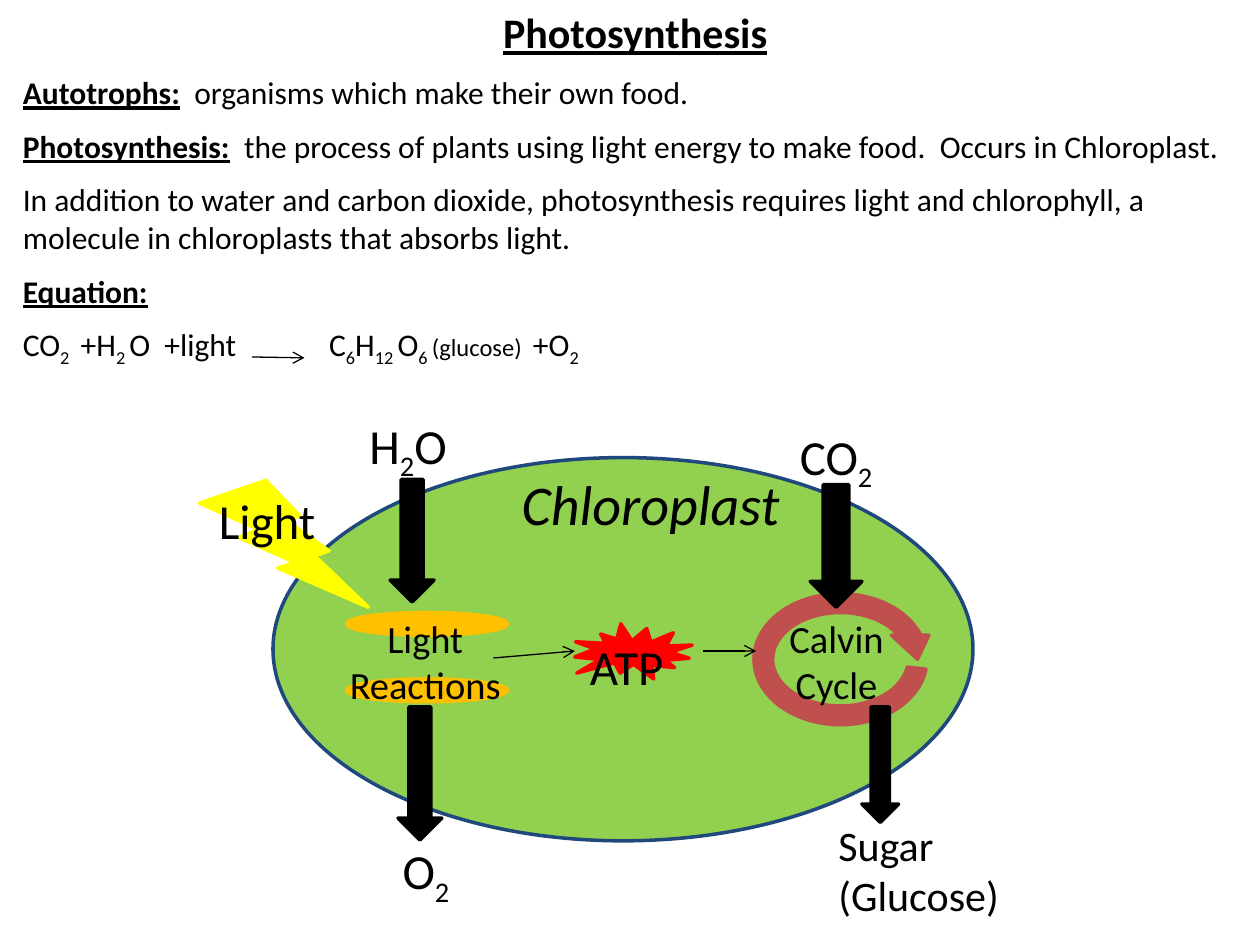
from lxml import etree
from pptx import Presentation
from pptx.dml.color import RGBColor
from pptx.enum.shapes import MSO_CONNECTOR, MSO_SHAPE
from pptx.enum.text import MSO_ANCHOR, MSO_AUTO_SIZE, PP_ALIGN
from pptx.oxml.ns import qn
from pptx.util import Pt

STRAIGHT = MSO_CONNECTOR.STRAIGHT
OVAL = MSO_SHAPE.OVAL
DOWN_ARROW = MSO_SHAPE.DOWN_ARROW
CYCLE_ARROW = MSO_SHAPE.CIRCULAR_ARROW
BOLT = MSO_SHAPE.LIGHTNING_BOLT
BURST = MSO_SHAPE.EXPLOSION1
LEFT, CENTER = PP_ALIGN.LEFT, PP_ALIGN.CENTER
TOP = MSO_ANCHOR.TOP
NO_FIT = MSO_AUTO_SIZE.NONE

BLACK = RGBColor(0x00, 0x00, 0x00)
GREEN = RGBColor(0x92, 0xD0, 0x50)
NAVY = RGBColor(0x1F, 0x49, 0x7D)
ORANGE = RGBColor(0xFF, 0xC0, 0x00)
BRICK = RGBColor(0xC0, 0x50, 0x4D)
YELLOW = RGBColor(0xFF, 0xFF, 0x00)
RED = RGBColor(0xFF, 0x00, 0x00)

FONT = "Calibri"
PLAIN, SUB, TERM, SMALL = "plain", "subscript", "term", "small"
PRODUCTS_TAB = 175

NOTES = [
    [("Autotrophs:", TERM), ("  organisms which make their own food.", PLAIN)],
    [("Photosynthesis:", TERM),
     ("  the process of plants using light energy to make food."
      "  Occurs in Chloroplast.", PLAIN)],
    [("In addition to water and carbon dioxide, photosynthesis requires light "
      "and chlorophyll, a molecule in chloroplasts that absorbs light.", PLAIN)],
    [("Equation:", TERM)],
    [("CO", PLAIN), ("2 ", SUB), (" +H", PLAIN), ("2 ", SUB),
     ("O  +light\tC", PLAIN), ("6", SUB), ("H", PLAIN), ("12 ", SUB),
     ("O", PLAIN), ("6 ", SUB), ("(glucose)  ", SMALL), ("+O", PLAIN),
     ("2", SUB)],
]

# Spans, left, top, width, height, size, alignment
LABELS = [
    ([("ATP", PLAIN)], 330, 360, 79, 41, 28, LEFT),
    ([("Calvin Cycle", PLAIN)], 426, 348, 104, 61, 22, CENTER),
    ([("Light", PLAIN)], 118, 277, 74, 41, 28, LEFT),
    ([("H", PLAIN), ("2", SUB), ("O", PLAIN)], 204, 234, 67, 41, 28, LEFT),
    ([("O", PLAIN), ("2", SUB)], 223, 477, 58, 41, 28, LEFT),
    ([("CO", PLAIN), ("2", SUB)], 450, 240, 71, 41, 28, LEFT),
    ([("Sugar (Glucose)", PLAIN)], 472, 464.5, 129, 66, 24, LEFT),
    ([("Light Reactions", PLAIN)], 174, 348, 138, 61, 22, CENTER),
]

# Left, top, width, height of the arrows for what goes in and out
FLOWS = [
    (223, 274, 25, 70),
    (227.5, 404, 25, 76),
    (463, 277, 29.5, 70),
    (492.5, 404, 21, 66),
]


def format_paragraph(para, size, align=LEFT):
    para.alignment = align
    para.font.name = FONT
    para.font.size = Pt(size)
    para.font.color.rgb = BLACK


def add_spans(para, spans):
    for text, style in spans:
        span = para.add_run()
        span.text = text
        if style == TERM:
            span.font.bold = span.font.underline = True
        elif style == SMALL:
            span.font.size = Pt(14)
        elif style == SUB:
            span._r.get_or_add_rPr().set("baseline", "-25000")


def add_tab_stop(para, position):
    properties = para._p.get_or_add_pPr()
    stops = etree.Element(qn("a:tabLst"))
    etree.SubElement(stops, qn("a:tab"), pos=str(Pt(position)), algn="l")
    # The schema wants tab stops ahead of the default run properties
    properties.find(qn("a:defRPr")).addprevious(stops)


def add_box(page, left, top, width, height):
    box = page.shapes.add_textbox(Pt(left), Pt(top), Pt(width), Pt(height))
    box.text_frame.word_wrap = True
    return box.text_frame


def add_label(page, spans, left, top, width, height, size, align):
    para = add_box(page, left, top, width, height).paragraphs[0]
    format_paragraph(para, size, align)
    add_spans(para, spans)
    return para


def add_figure(page, kind, left, top, width, height, fill, line=None):
    shape = page.shapes.add_shape(kind, Pt(left), Pt(top), Pt(width), Pt(height))
    shape.shadow.inherit = False
    shape.fill.solid()
    shape.fill.fore_color.rgb = fill
    shape.line.color.rgb = line or fill
    shape.line.width = Pt(2)
    return shape


def add_arrow(page, x1, y1, x2, y2):
    arrow = page.shapes.add_connector(STRAIGHT, Pt(x1), Pt(y1), Pt(x2), Pt(y2))
    arrow.line.color.rgb = BLACK
    arrow.line.width = Pt(0.75)
    etree.SubElement(arrow.line._get_or_add_ln(), qn("a:tailEnd"), type="arrow")
    etree.SubElement(arrow._element.spPr, qn("a:effectLst"))


def add_title(page):
    title = page.shapes.title
    title.left, title.top, title.width, title.height = Pt(6), Pt(0), Pt(714), Pt(37)
    frame = title.text_frame
    frame.text = "Photosynthesis"
    frame.vertical_anchor = TOP
    frame.auto_size = NO_FIT
    para = frame.paragraphs[0]
    format_paragraph(para, 24, CENTER)
    para.font.bold = para.font.underline = True


def add_notes(page):
    frame = add_box(page, 6, 38.3, 714, 190)
    for index, spans in enumerate(NOTES):
        para = frame.add_paragraph() if index else frame.paragraphs[0]
        format_paragraph(para, 18)
        para.space_after = Pt(9)
        add_spans(para, spans)
    add_tab_stop(para, PRODUCTS_TAB)
    add_arrow(page, 144, 204, 174, 204.5)


def add_chloroplast(page):
    add_figure(page, OVAL, 156, 261.5, 400, 219, GREEN, NAVY)
    # Thylakoid discs around the light reactions
    for top in (350, 388):
        add_figure(page, OVAL, 198, top, 92, 13, ORANGE)
    # Calvin cycle
    cycle = add_figure(page, CYCLE_ARROW, 425.5, 334, 109.5, 85.5, BRICK)
    for index, value in enumerate((0.125, 11.423, 204.577, 3.992, 0.125)):
        cycle.adjustments[index] = value
    # Light and ATP
    add_figure(page, BOLT, 114, 274.5, 96.5, 72.5, YELLOW)
    burst = add_figure(page, BURST, 328.5, 356.5, 67, 31.5, RED)
    burst._element.spPr.xfrm.set("flipV", "1")
    add_arrow(page, 282, 376, 328.5, 372)
    add_arrow(page, 402, 372, 432, 372)


def main():
    deck = Presentation()
    deck.slide_width, deck.slide_height = Pt(720), Pt(540)
    page = deck.slides.add_slide(deck.slide_layouts[5])
    add_title(page)
    add_notes(page)
    add_chloroplast(page)
    for flow in FLOWS:
        add_figure(page, DOWN_ARROW, *flow, BLACK)
    for label in LABELS:
        add_label(page, *label)
    name = add_label(page, [("Chloroplast", PLAIN)], 291, 265, 166, 46, 32, LEFT)
    name.font.italic = True
    deck.save("out.pptx")


if __name__ == "__main__":
    main()
